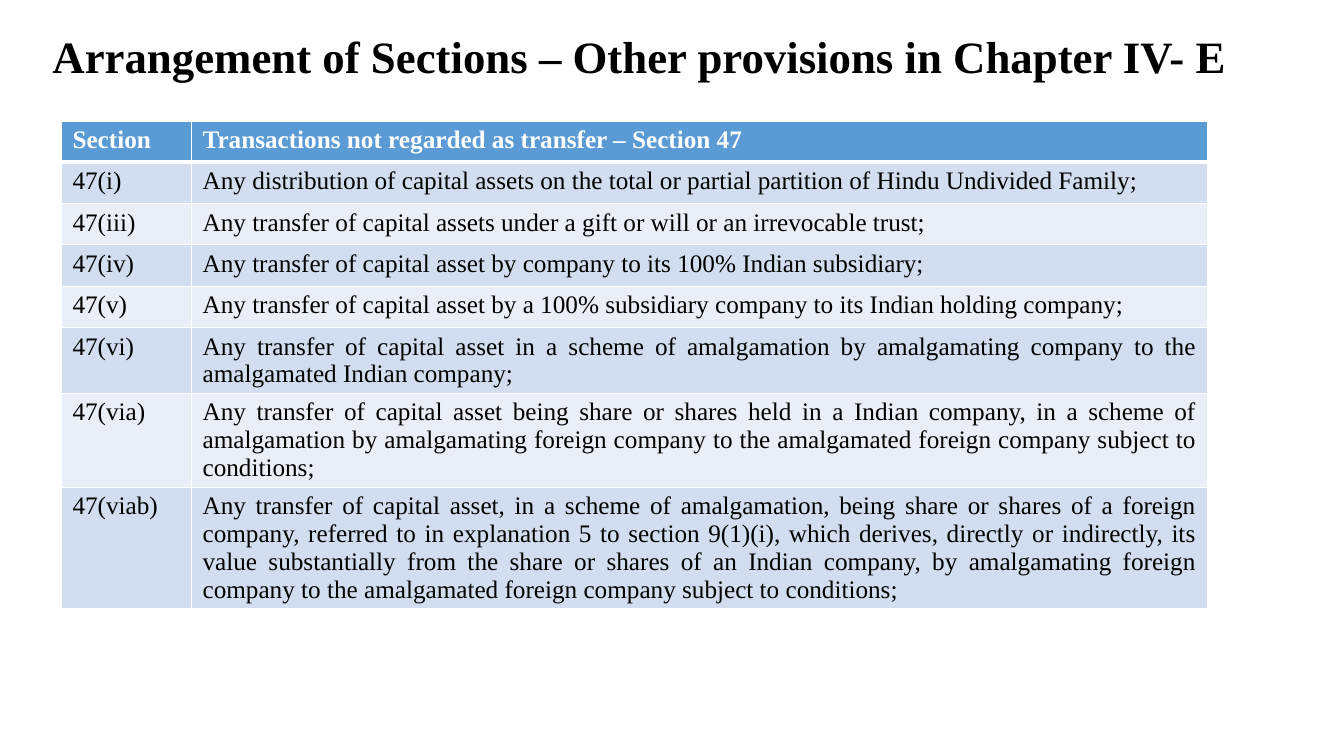
import pptx
import pptx.util
import pptx.dml.color
import pptx.enum.text
import pptx.oxml
import pptx.oxml.ns

Inches = pptx.util.Inches
Pt = pptx.util.Pt
ALIGN = pptx.enum.text.PP_ALIGN
ANCHOR = pptx.enum.text.MSO_ANCHOR

FONT = "Times New Roman"
COLORS = {
    "text": "000000",
    "header_text": "FFFFFF",
    "header": "5B9BD5",
    "odd": "D2DEEF",
    "even": "EAEFF7",
    "border": "FFFFFF",
}
TITLE = "Arrangement of Sections – Other provisions in Chapter IV- E"
ROWS = [
    ("Section", "Transactions not regarded as transfer – Section 47"),
    ("47(i)", "Any distribution of capital assets on the total or partial partition of Hindu Undivided Family;"),
    ("47(iii)", "Any transfer of capital assets under a gift or will or an irrevocable trust;"),
    ("47(iv)", "Any transfer of capital asset by company to its 100% Indian subsidiary;"),
    ("47(v)", "Any transfer of capital asset by a 100% subsidiary company to its Indian holding company;"),
    ("47(vi)", "Any transfer of capital asset in a scheme of amalgamation by amalgamating company to the "
     "amalgamated Indian company;"),
    ("47(via)", "Any transfer of capital asset being share or shares held in a Indian company, in a scheme of "
     "amalgamation by amalgamating foreign company to the amalgamated foreign company subject to conditions;"),
    ("47(viab)", "Any transfer of capital asset, in a scheme of amalgamation, being share or shares of a foreign "
     "company, referred to in explanation 5 to section 9(1)(i), which derives, directly or indirectly, its "
     "value substantially from the share or shares of an Indian company, by amalgamating foreign company to "
     "the amalgamated foreign company subject to conditions;"),
]


def rgb(name):
    return pptx.dml.color.RGBColor.from_string(COLORS[name])


def add_span(para, text, size, color, bold):
    span = para.add_run()
    span.text = text
    span.font.name = FONT
    span.font.size = Pt(size)
    span.font.bold = bold
    span.font.color.rgb = rgb(color)


def set_borders(cell, widths):
    properties = cell._tc.get_or_add_tcPr()
    for position, (side, width) in enumerate(widths.items()):
        line = pptx.oxml.parse_xml(
            f'<a:ln{side} {pptx.oxml.ns.nsdecls("a")} w="{Pt(width)}"><a:solidFill>'
            f'<a:srgbClr val="{COLORS["border"]}"/></a:solidFill></a:ln{side}>'
        )
        properties.insert(position, line)


def add_title(page, left, top, width, height):
    box = page.shapes.title
    box.left, box.top = Inches(left), Inches(top)
    box.width, box.height = Inches(width), Inches(height)
    frame = box.text_frame
    frame.word_wrap = True
    frame.vertical_anchor = ANCHOR.MIDDLE
    para = frame.paragraphs[0]
    para.alignment = ALIGN.LEFT
    para.line_spacing = 0.9
    add_span(para, TITLE, 32, "text", True)


def add_sections_table(page, left, top, width, section_width, row_height):
    box = page.shapes.add_table(
        len(ROWS), 2, Inches(left), Inches(top), Inches(width), Inches(row_height * len(ROWS))
    )
    table = box.table
    table.columns[0].width = Inches(section_width)
    table.columns[1].width = Inches(width - section_width)
    for row, texts in enumerate(ROWS):
        table.rows[row].height = Inches(row_height)
        header = row == 0
        fill = "header" if header else "odd" if row % 2 else "even"
        for column, text in enumerate(texts):
            cell = table.cell(row, column)
            cell.margin_left = cell.margin_right = Inches(0.11)
            cell.margin_top = cell.margin_bottom = Inches(0.05)
            cell.fill.solid()
            cell.fill.fore_color.rgb = rgb(fill)
            set_borders(cell, {"L": 1, "R": 1, "T": 3 if row == 1 else 1, "B": 3 if header else 1})
            para = cell.text_frame.paragraphs[0]
            para.alignment = ALIGN.JUSTIFY if column and not header else ALIGN.LEFT
            add_span(para, text, 18, "header_text" if header else "text", header)


def main():
    deck = pptx.Presentation()
    deck.slide_width, deck.slide_height = Inches(13.33), Inches(7.5)
    page = deck.slides.add_slide(deck.slide_layouts[5])
    add_title(page, 0.42, 0.11, 11.92, 0.95)
    add_sections_table(page, 0.61, 1.2, 11.37, 1.29, 0.41)
    deck.save("out.pptx")


if __name__ == "__main__":
    main()
